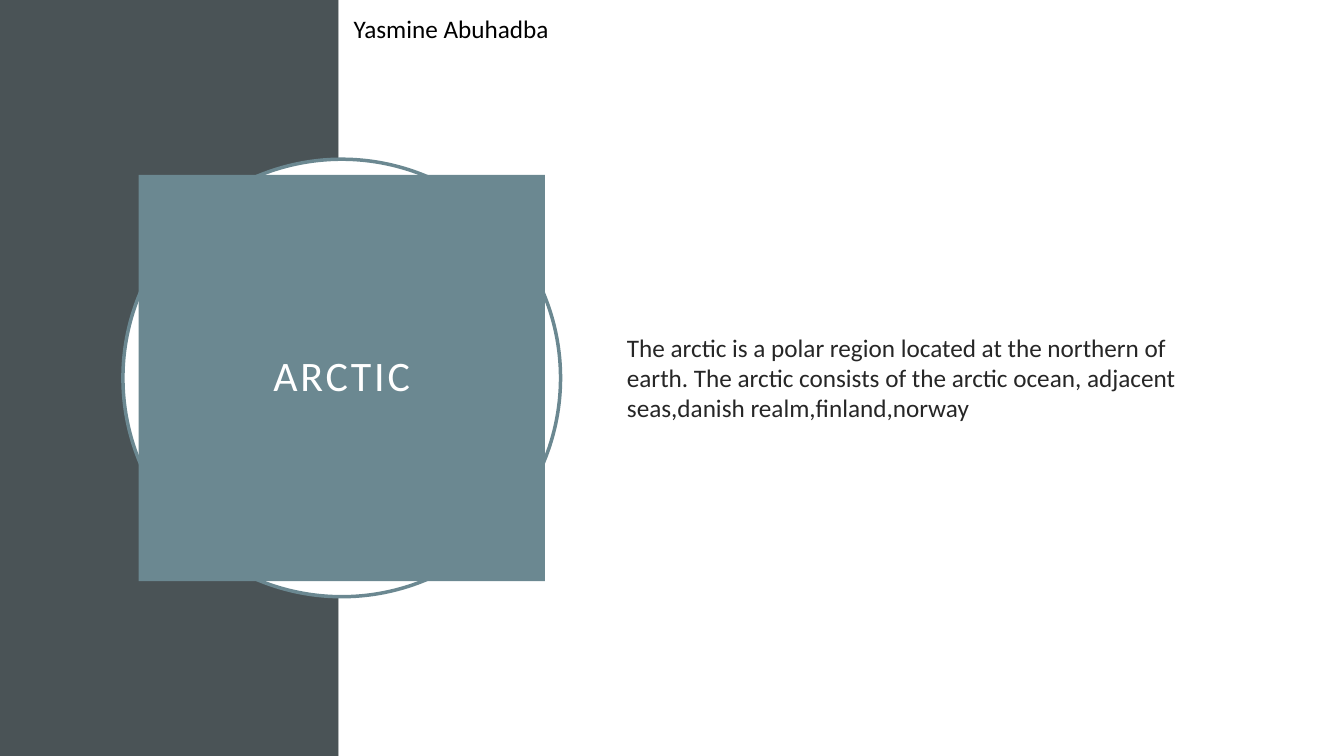
"""Build the Arctic slide with a title badge and a short description."""
from dataclasses import dataclass

from pptx import Presentation
from pptx.dml.color import RGBColor as Color
from pptx.enum.shapes import MSO_SHAPE as Preset
from pptx.enum.text import MSO_ANCHOR as Anchor, MSO_AUTO_SIZE as Fit, PP_ALIGN as Align
from pptx.util import Inches, Pt


@dataclass(frozen=True)
class Theme:
    font: str = "Calibri"
    slate: str = "4A5356"
    teal: str = "6B8891"
    white: str = "FFFFFF"
    ink: str = "262626"
    black: str = "000000"
    title_size: int = 30
    text_size: int = 18
    ring_width: float = 2.5


def write(box, text, *, theme, color, size, align=Align.LEFT, anchor=Anchor.TOP,
          inset=None, line_spacing=None, tracking=0, fit=Fit.NONE):
    frame = box.text_frame
    frame.word_wrap = True
    frame.auto_size = fit
    frame.vertical_anchor = anchor
    if inset is not None:
        frame.margin_left = frame.margin_right = Inches(inset)
        frame.margin_top = frame.margin_bottom = Inches(inset)
    para = frame.paragraphs[0]
    para.alignment = align
    if line_spacing:
        para.line_spacing = line_spacing
    span = para.add_run()
    span.text = text
    span.font.name = theme.font
    span.font.size = Pt(size)
    span.font.color.rgb = Color.from_string(color)
    if tracking:
        span.font._element.set("spc", str(tracking * 100))


class Page:
    def __init__(self, deck, theme):
        self.theme = theme
        self.width, self.height = deck.slide_width, deck.slide_height
        self.slide = deck.slides.add_slide(deck.slide_layouts[6])

    def place(self, left, top, width, height):
        return (round(self.width * left / 100), round(self.height * top / 100),
                round(self.width * width / 100), round(self.height * height / 100))

    def shape(self, preset, area, fill, line=None):
        shape = self.slide.shapes.add_shape(preset, *self.place(*area))
        shape.shadow.inherit = False
        shape.fill.solid()
        shape.fill.fore_color.rgb = Color.from_string(fill)
        if line:
            shape.line.color.rgb = Color.from_string(line)
            shape.line.width = Pt(self.theme.ring_width)
        else:
            shape.line.fill.background()
        return shape

    def centred(self, preset, center, size, fill, line=None):
        width = size * self.height / self.width
        area = (center - width / 2, 50 - size / 2, width, size)
        return self.shape(preset, area, fill, line)

    def text(self, text, area, color, **style):
        box = self.slide.shapes.add_textbox(*self.place(*area))
        write(box, text, theme=self.theme, color=color,
              size=self.theme.text_size, **style)


def main():
    deck = Presentation()
    deck.slide_width, deck.slide_height = Inches(13.33), Inches(7.5)
    theme = Theme()
    page = Page(deck, theme)
    panel, badge_center = 25.2, 25.43

    page.shape(Preset.RECTANGLE, (0, 0, panel, 100), theme.slate)
    page.shape(Preset.RECTANGLE, (panel, 0, 100 - panel, 100), theme.white)
    page.centred(Preset.OVAL, badge_center, 57.87, theme.white, theme.teal)
    badge = page.centred(Preset.RECTANGLE, badge_center, 53.73, theme.teal)
    write(badge, "ARCTIC", theme=theme, color=theme.white, size=theme.title_size,
          align=Align.CENTER, anchor=Anchor.MIDDLE, inset=0.2,
          line_spacing=0.9, tracking=2)
    page.text("The arctic is a polar region located at the northern of earth. "
              "The arctic consists of the arctic ocean, adjacent "
              "seas,danish realm,finland,norway",
              (45.91, 20.4, 43.66, 59.07), theme.ink, anchor=Anchor.MIDDLE)
    page.text("Yasmine Abuhadba", (25.58, 1.07, 18.75, 5.33), theme.black,
              fit=Fit.SHAPE_TO_FIT_TEXT)
    deck.save("out.pptx")


if __name__ == "__main__":
    main()
